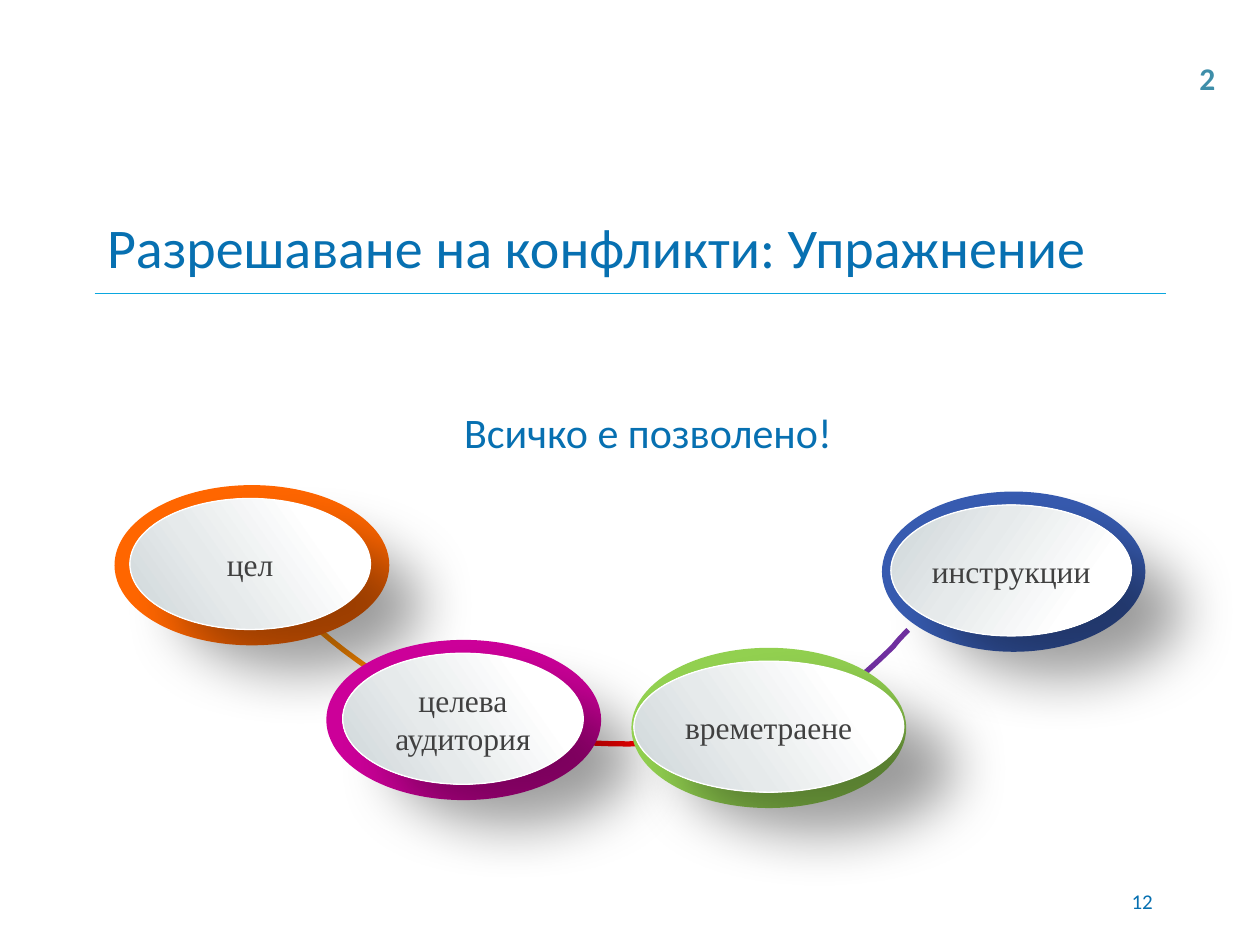
"""Build the conflict resolution exercise slide."""
from dataclasses import dataclass

from lxml import etree
from pptx import Presentation
from pptx import util as u
from pptx.dml.color import RGBColor
from pptx.enum import shapes, text
from pptx.oxml import ns


@dataclass(frozen=True)
class Theme:
    """Colours, fonts and type sizes."""
    blue: str = "0770B1"
    rule: str = "0BA7DF"
    teal: str = "3E8EA9"
    ink: str = "404040"
    white: str = "FFFFFF"
    sans: str = "Calibri"
    serif: str = "Times New Roman"
    head: int = 32
    sub: int = 24
    body: int = 18
    small: int = 12


T = Theme()
A = text.PP_ALIGN
V = text.MSO_ANCHOR
SIZE = (25.4, 19.05)
RULE = (1.91, 5.92, 23.5, 5.92)
HIGH, CORE, DROP = 3.23, 2.64, 0.27
STEPS = 8

LABELS = [
    ("Разрешаване на конфликти: Упражнение", (1.91, 4.01, 21.59, 1.91),
     dict(size=T.head), dict(anchor=V.MIDDLE)),
    ("12", (18.21, 17.65, 5.28, 1.02),
     dict(size=T.small), dict(anchor=V.MIDDLE, align=A.RIGHT)),
    ("Всичко е позволено!", (6.88, 7.92, 12.37, 1.37),
     dict(size=T.sub), dict(align=A.CENTER, lead=1.15, after=6)),
    ("2", (23.93, 1.07, 0.84, 1.02),
     dict(size=T.body, tint=T.teal, bold=True), dict(wrap=False)),
]
ARCS = [
    ("7030A0", [(18.31, 12.7), (18.21, 12.8), (18.11, 12.9), (18.01, 13.03),
                (17.68, 13.36), (17.32, 13.67), (16.97, 13.97),
                (16.51, 14.25), (16.03, 14.5), (15.49, 14.71)]),
    ("FF0000", [(11.4, 14.94), (11.96, 14.99), (12.52, 15.01), (13.08, 14.99),
                (13.36, 14.96), (13.64, 14.94), (13.92, 14.88)]),
    ("FF8A00", [(6.27, 12.55), (6.81, 13.06), (7.47, 13.51), (8.18, 13.97)]),
]
OVALS = [
    ("инструкции", "375BB0", (17.78, 9.91, 5.31), (17.96, 4.85), False),
    ("цел", "FF6600", (2.31, 9.78, 5.54), (2.62, 4.85), True),
    ("целева аудитория", "CC0099", (6.58, 12.9, 5.54), (6.91, 4.85), True),
    ("времетраене", "92D050", (12.73, 13.06, 5.54), (12.78, 5.44), True),
]
STOPS = [(0, "CDD5D8"), (37, "E6EAEB"), (77, T.white), (100, T.white)]


def hue(code):
    """Return a colour from its hex code."""
    return RGBColor.from_string(code)


def box(dims):
    """Turn centimetres into lengths."""
    return [u.Cm(d) for d in dims]


def node(top, tag, **atts):
    """Add a drawing element below another."""
    kid = etree.SubElement(top, ns.qn("a:" + tag))
    for key, val in atts.items():
        kid.set(key, str(val))
    return kid


def write(frame, words, size, tint=T.blue, face=T.sans, bold=False,
          align=A.LEFT):
    """Put one run in a frame and return its paragraph."""
    para = frame.paragraphs[0]
    para.alignment = align
    run = para.add_run()
    run.text = words
    run.font.size = u.Pt(size)
    run.font.name = face
    run.font.bold = bold
    run.font.color.rgb = hue(tint)
    return para


def label(slide, words, dims, font, anchor=V.TOP, align=A.LEFT, lead=None,
          after=None, wrap=True):
    """Add a text box."""
    frame = slide.shapes.add_textbox(*box(dims)).text_frame
    frame.word_wrap = wrap
    frame.vertical_anchor = anchor
    para = write(frame, words, align=align, **font)
    if lead:
        para.line_spacing = lead
    if after:
        para.space_after = u.Pt(after)


def rule(slide):
    """Draw the line below the title."""
    line = slide.shapes.add_connector(shapes.MSO_CONNECTOR.STRAIGHT, *box(RULE))
    line.line.color.rgb = hue(T.rule)
    line.line.width = u.Pt(0.75)
    node(line._element.spPr, "effectLst")


def curve(knots):
    """Yield points along joined cubic curves."""
    for i in range(0, len(knots) - 1, 3):
        for step in range(1, STEPS + 1):
            t = step / STEPS
            parts = ((1 - t) ** 3, 3 * t * (1 - t) ** 2,
                     3 * t * t * (1 - t), t ** 3)
            yield tuple(u.Cm(sum(w * p[ax] for w, p in
                                 zip(parts, knots[i:i + 4])))
                        for ax in (0, 1))


def arc(slide, tint, knots):
    """Draw a curved link."""
    pen = slide.shapes.build_freeform(*box(knots[0]))
    pen.add_line_segments(list(curve(knots)), close=False)
    link = pen.convert_to_shape()
    link.fill.background()
    link.line.color.rgb = hue(tint)
    link.line.width = u.Pt(3)
    link.shadow.inherit = False


def disc(slide, dims, flip):
    """Add an ellipse without a shadow."""
    oval = slide.shapes.add_shape(shapes.MSO_SHAPE.OVAL, *box(dims))
    oval.shadow.inherit = False
    if flip:
        oval._element.spPr.xfrm.set("flipH", "1")
    return oval


def shade(oval, flip):
    """Give an ellipse its gradient and soft shadow."""
    oval.fill.gradient()
    oval.fill.gradient_angle = 325
    props = oval._element.spPr
    stops = props.find(".//" + ns.qn("a:gsLst"))
    for old in list(stops):
        stops.remove(old)
    ramp = [(100 - p, c) for p, c in reversed(STOPS)] if flip else STOPS
    for place, code in ramp:
        node(node(stops, "gs", pos=place * 1000), "srgbClr", val=code)
    cast = node(props.find(ns.qn("a:effectLst")), "outerShdw",
                blurRad=u.Pt(33), dist=u.Pt(36.7), dir=39 * 60000,
                algn="ctr", rotWithShape=0)
    node(node(cast, "srgbClr", val="000000"), "alpha", val=38000)


def oval(slide, words, tint, ring, core, flip):
    """Draw a coloured ring with a labelled core."""
    left, top, wide = ring
    rim = disc(slide, (left, top, wide, HIGH), flip)
    rim.fill.solid()
    rim.fill.fore_color.rgb = hue(tint)
    rim.line.fill.background()
    face = disc(slide, (core[0], top + DROP, core[1], CORE), flip)
    face.line.color.rgb = hue(T.white)
    face.line.width = u.Pt(0.75)
    shade(face, flip)
    frame = face.text_frame
    frame.margin_left = frame.margin_right = 0
    frame.margin_top = frame.margin_bottom = 0
    frame.word_wrap = True
    frame.vertical_anchor = V.MIDDLE
    write(frame, words, T.body, T.ink, T.serif, align=A.CENTER)


def main():
    """Build and save the slide."""
    deck = Presentation()
    deck.slide_width, deck.slide_height = box(SIZE)
    slide = deck.slides.add_slide(deck.slide_layouts[6])
    rule(slide)
    for item in ARCS:
        arc(slide, *item)
    for item in OVALS:
        oval(slide, *item)
    for words, dims, font, form in LABELS:
        label(slide, words, dims, font, **form)
    deck.save("out.pptx")


if __name__ == "__main__":
    main()
